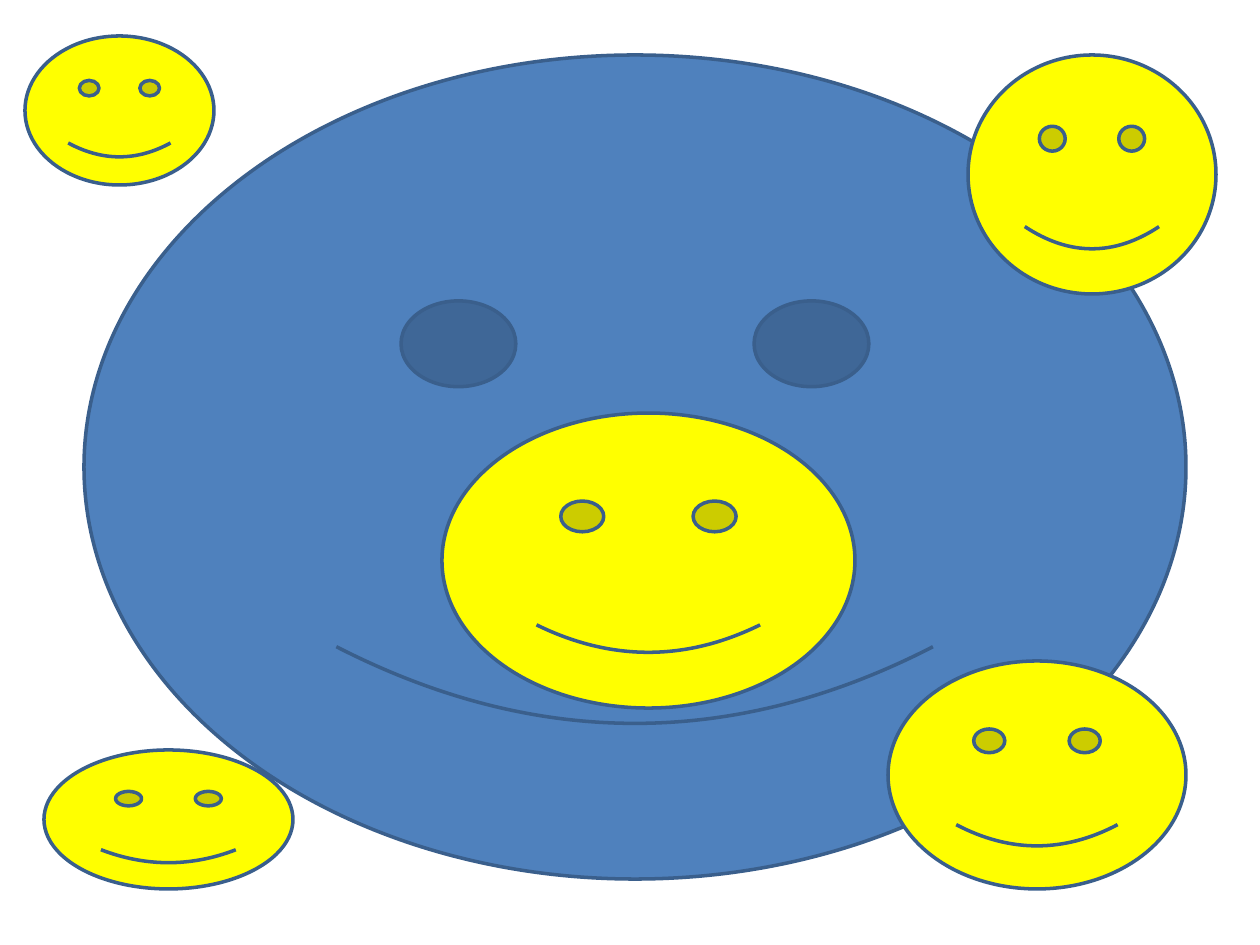
"""Build a slide of yellow smiley faces around one large blue smiley face."""
from pptx import Presentation
from pptx import util as u
from pptx.dml.color import RGBColor
from pptx.enum import shapes

PX_PER_INCH = 126
SLIDE_SIZE = (1260, 945)
BLANK_LAYOUT = 6
LINE_WIDTH = u.Pt(2)
COLORS = {"blue": "4F81BD", "yellow": "FFFF00", "outline": "3A5F8C"}

FACES = [
    ("blue", (84, 55, 1102, 824)),
    ("yellow", (25, 36, 189, 149)),
    ("yellow", (44, 750, 249, 139)),
    ("yellow", (968, 55, 248, 239)),
    ("yellow", (888, 661, 298, 228)),
    ("yellow", (442, 413, 413, 295)),
]


def px(length):
    return u.Inches(length / PX_PER_INCH)


def add_face(page, color, place):
    face = page.shapes.add_shape(shapes.MSO_SHAPE.SMILEY_FACE, *map(px, place))
    face.shadow.inherit = False
    face.fill.solid()
    face.fill.fore_color.rgb = RGBColor.from_string(COLORS[color])
    face.line.color.rgb = RGBColor.from_string(COLORS["outline"])
    face.line.width = LINE_WIDTH


def main():
    deck = Presentation()
    deck.slide_width, deck.slide_height = map(px, SLIDE_SIZE)
    page = deck.slides.add_slide(deck.slide_layouts[BLANK_LAYOUT])
    for color, place in FACES:
        add_face(page, color, place)
    deck.save("out.pptx")


if __name__ == "__main__":
    main()
